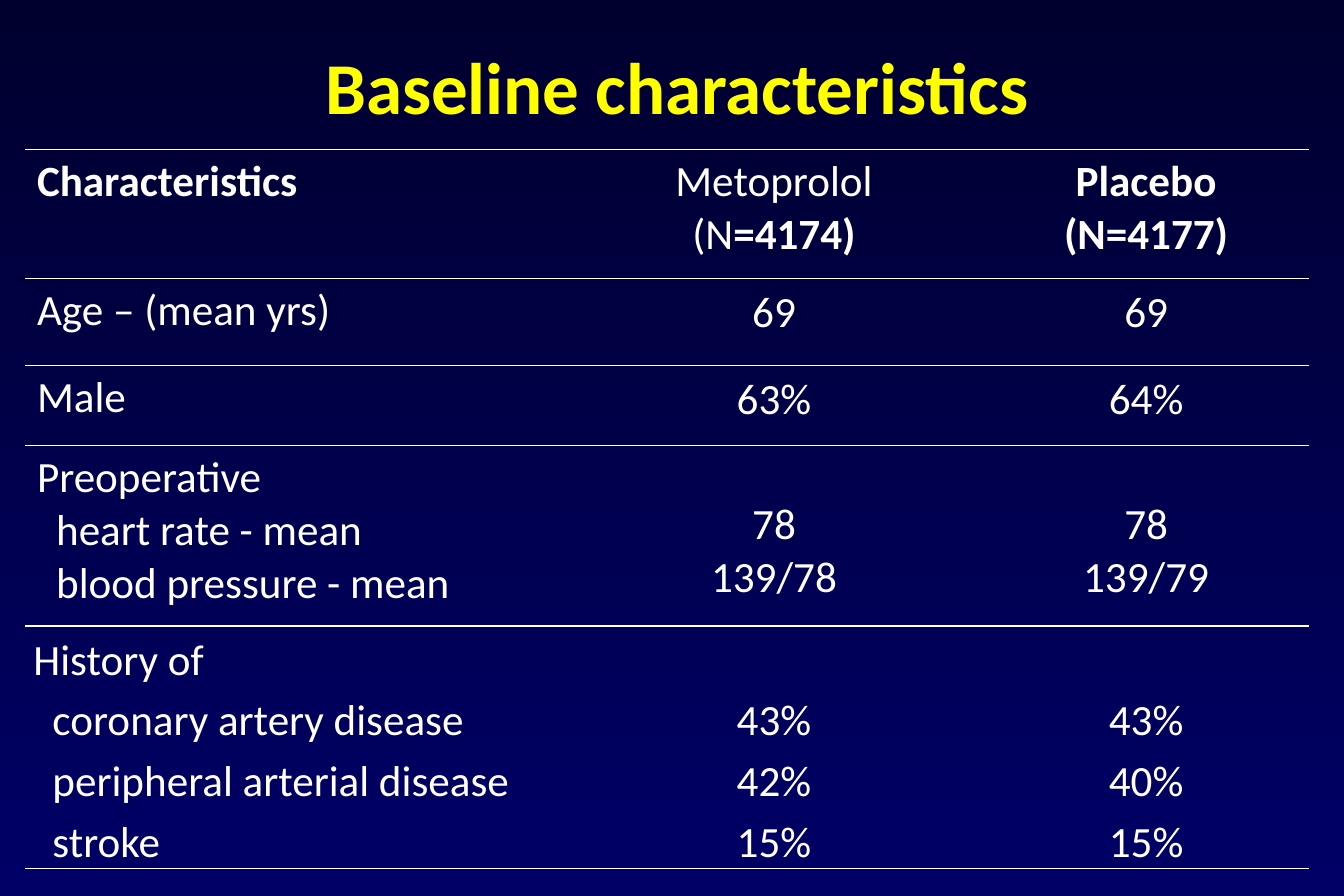
from lxml import etree
from pptx import Presentation
from pptx.dml.color import RGBColor
from pptx.enum.text import MSO_ANCHOR, PP_ALIGN
from pptx.oxml.ns import qn
from pptx.util import Inches, Pt

# Content: a cell is a list of lines, a line is a list of (text, bold) runs
TITLE = "Baseline characteristics"


def plain(*lines):
    return [[(line, False)] for line in lines]


def strong(*lines):
    return [[(line, True)] for line in lines]


HEADER = [
    strong("Characteristics"),
    [[("Metoprolol", False)], [("(N", False), ("=4174)", True)]],
    strong("Placebo", "(N=4177)"),
]
AGE = [plain("Age – (mean yrs)"), plain("69"), plain("69")]
MALE = [plain("Male"), plain("63%"), plain("64%")]
PREOPERATIVE = [
    plain("Preoperative", "heart rate - mean", "blood pressure - mean"),
    plain("78", "139/78"),
    plain("78", "139/79"),
]
HISTORY = [
    plain("History of", "coronary artery disease",
          "peripheral arterial disease", "stroke"),
    plain("43%", "42%", "15%"),
    plain("43%", "40%", "15%"),
]

# Cell layouts: (side margin, top margin, line spacing)
ROOMY = (0.1, 0.05, 1.0)
TIGHT = (0.07, 0, 1.15)
BELOW_PREOPERATIVE = (0.07, 0.44, 1.0)
BELOW_HISTORY = (0.07, 0.51, 1.15)

# Rows: (height, cells, label layout, value layout)
ROWS = [
    (1.08, HEADER, ROOMY, ROOMY),
    (0.73, AGE, ROOMY, TIGHT),
    (0.67, MALE, ROOMY, TIGHT),
    (1.51, PREOPERATIVE, ROOMY, BELOW_PREOPERATIVE),
    (2.03, HISTORY, TIGHT, BELOW_HISTORY),
]
COLUMN_WIDTHS = [4.52, 3.5, 2.73]
SUBITEM_INDENT = 0.16

FONT = "Calibri"
WHITE = RGBColor(0xFF, 0xFF, 0xFF)
YELLOW = RGBColor(0xFF, 0xFF, 0x00)
NAVY_TOP = RGBColor(0x00, 0x00, 0x2F)
NAVY_BOTTOM = RGBColor(0x00, 0x00, 0x66)


def add_run(paragraph, text, size, color, bold):
    run = paragraph.add_run()
    run.text = text
    run.font.name = FONT
    run.font.size = Pt(size)
    run.font.bold = bold
    run.font.color.rgb = color


def set_borders(cell):
    """Rule the top and bottom edges, leave the sides open."""
    properties = cell._tc.get_or_add_tcPr()
    for edge in ("a:lnL", "a:lnR", "a:lnT", "a:lnB"):
        line = etree.SubElement(properties, qn(edge), w=str(Pt(1)))
        if edge in ("a:lnL", "a:lnR"):
            etree.SubElement(line, qn("a:noFill"))
        else:
            fill = etree.SubElement(line, qn("a:solidFill"))
            etree.SubElement(fill, qn("a:srgbClr"), val=str(WHITE))


def fill_cell(cell, lines, layout, is_label):
    side, top, spacing = layout
    set_borders(cell)
    cell.fill.background()
    cell.margin_left = cell.margin_right = Inches(side)
    cell.margin_top = Inches(top)
    cell.margin_bottom = 0
    frame = cell.text_frame
    for index, runs in enumerate(lines):
        paragraph = frame.add_paragraph() if index else frame.paragraphs[0]
        paragraph.alignment = PP_ALIGN.LEFT if is_label else PP_ALIGN.CENTER
        paragraph.line_spacing = spacing
        if is_label and index:
            indent = str(Inches(SUBITEM_INDENT))
            paragraph._p.get_or_add_pPr().set("marL", indent)
        for text, bold in runs:
            add_run(paragraph, text, 26, WHITE, bold)


# Slide and background
presentation = Presentation()
presentation.slide_width = Inches(11.25)
presentation.slide_height = Inches(7.5)
slide = presentation.slides.add_slide(presentation.slide_layouts[6])
background = slide.background.fill
background.gradient()
background.gradient_angle = 270
for stop, color in zip(background.gradient_stops, (NAVY_TOP, NAVY_BOTTOM)):
    stop.color.rgb = color

# Title
title = slide.shapes.add_textbox(
    Inches(0.89), Inches(0.25), Inches(9.56), Inches(0.92))
title.text_frame.word_wrap = True
title.text_frame.vertical_anchor = MSO_ANCHOR.MIDDLE
heading = title.text_frame.paragraphs[0]
heading.alignment = PP_ALIGN.CENTER
add_run(heading, TITLE, 44, YELLOW, True)

# Table
table = slide.shapes.add_table(
    len(ROWS), len(COLUMN_WIDTHS), Inches(0.21), Inches(1.25),
    Inches(sum(COLUMN_WIDTHS)), Inches(sum(row[0] for row in ROWS))).table
table.first_row = False
table.horz_banding = False
for column, width in zip(table.columns, COLUMN_WIDTHS):
    column.width = Inches(width)
for row, (height, cells, label_layout, value_layout) in zip(table.rows, ROWS):
    row.height = Inches(height)
    for number, (cell, lines) in enumerate(zip(row.cells, cells)):
        layout = value_layout if number else label_layout
        fill_cell(cell, lines, layout, is_label=number == 0)

presentation.save("out.pptx")
